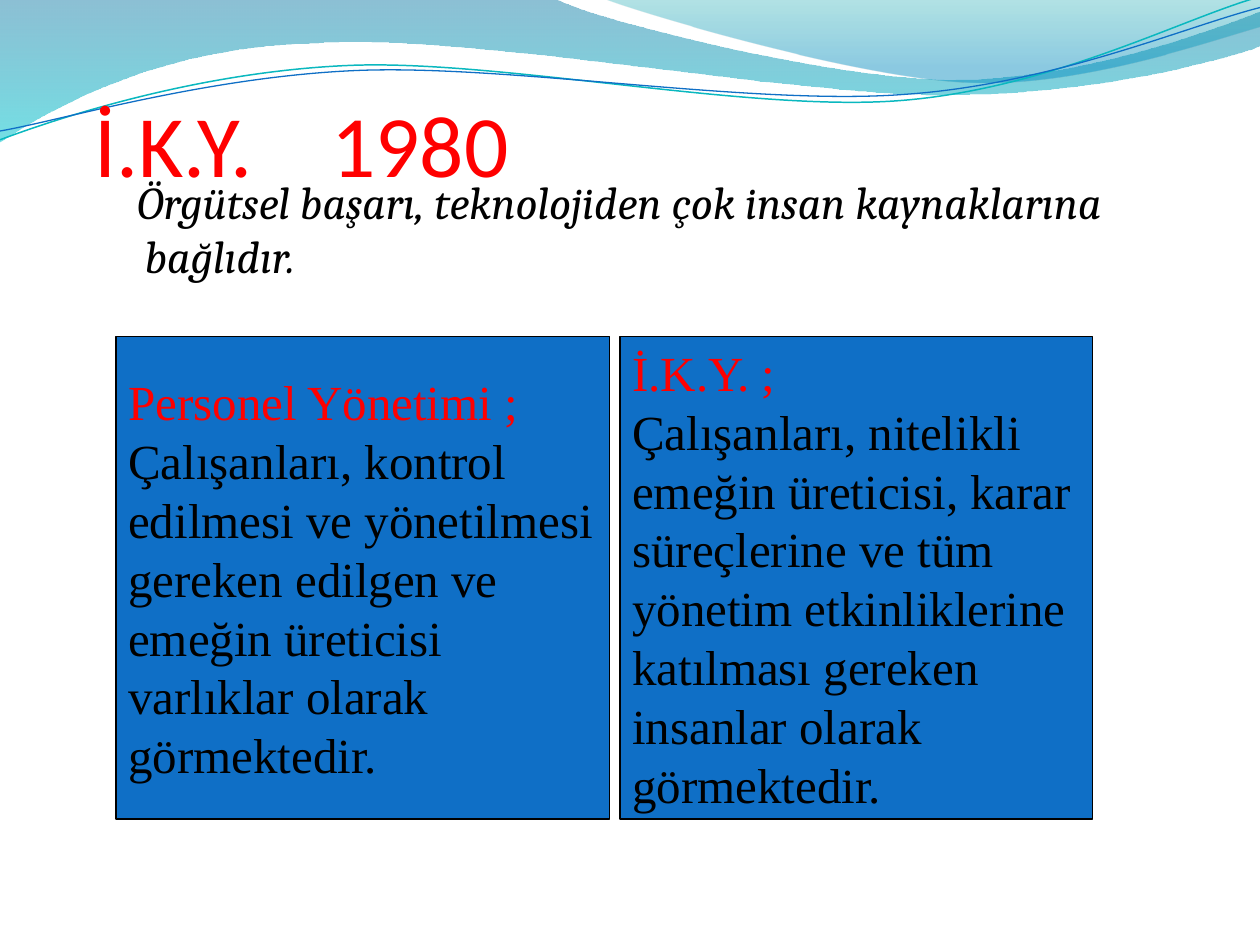
from lxml import etree
from pptx import Presentation
from pptx import util as u
from pptx.dml.color import RGBColor
from pptx.enum import shapes, text
from pptx.oxml.ns import qn

RED = RGBColor(0xFF, 0x00, 0x00)
BLACK = RGBColor(0x00, 0x00, 0x00)
BLUE = RGBColor(0x0F, 0x6F, 0xC6)
TEAL = RGBColor(0x0A, 0xB8, 0xBF)
DEEP_BLUE = RGBColor(0x00, 0x74, 0xA1)
CYAN = RGBColor(0x00, 0xC6, 0xCF)
SEA = RGBColor(0x00, 0xA1, 0xA9)
SKY = RGBColor(0x00, 0x8B, 0xBF)

WIDTH, HEIGHT = 10, 7.5
MARGIN = 0.75

TITLE = "İ.K.Y.\t1980"
SUBTITLE = "Örgütsel başarı, teknolojiden çok insan kaynaklarına bağlıdır."
# Left edge, width, heading, lines
PANELS = [
    (0.92, 3.92, "Personel Yönetimi ;",
     ["Çalışanları, kontrol", "edilmesi ve yönetilmesi", "gereken edilgen ve",
      "emeğin üreticisi", "varlıklar olarak", "görmektedir."]),
    (4.92, 3.75, "İ.K.Y. ;",
     ["Çalışanları, nitelikli", "emeğin üreticisi, karar", "süreçlerine ve tüm",
      "yönetim etkinliklerine", "katılması gereken", "insanlar olarak",
      "görmektedir."]),
]
PANEL_TOP, PANEL_HEIGHT = 2.67, 3.83

# Each outline: start, then points (2 numbers) or Bezier segments (6 numbers)
# Bands add gradient stops as (colour, opacity %, position)
BANDS = [
    ([(0, 0), (4.4, -0.01), (4.76, 0.17, 6.64, 0.63, 7.58, 0.63),
      (8.53, 0.63, 9.58, 0.26, 10, 0.09), (10.01, 0.36),
      (9.83, 0.44, 8.7, 0.76, 7.46, 0.75), (6.22, 0.75, 3.82, 0.28, 2.57, 0.34),
      (1.29, 0.36, 0.46, 0.83, -0.01, 1.13)],
     [(DEEP_BLUE, 45, 0), (CYAN, 55, 1)]),
    ([(4.79, -0.01), (5.09, 0.11, 6.82, 0.62, 7.69, 0.65),
      (8.56, 0.69, 9.61, 0.32, 10, 0.21), (10, 0)],
     [(SEA, 30, 0), (SKY, 45, 0.8)]),
]
WAVES = [
    ([(0, 1.11), (0.48, 0.93, 1.58, 0.57, 2.77, 0.52),
      (3.95, 0.47, 5.93, 0.89, 7.13, 0.8), (8.33, 0.71, 9.38, 0.15, 9.98, -0.02)],
     TEAL, 0.85),
    ([(0, 1.04), (0.47, 0.96, 1.64, 0.61, 2.83, 0.56),
      (4.03, 0.51, 5.97, 0.84, 7.17, 0.75), (8.36, 0.67, 9.41, 0.21, 10, 0.06)],
     BLUE, 0.75),
]
UNITS = 1000  # outline units per inch


def add_outline(page, outline, close):
    """Build straight segments, then bend those that have control points."""
    scaled = [[round(value * UNITS) for value in segment] for segment in outline]
    ends = [segment[-2:] for segment in scaled]
    left, top = (min(values) for values in zip(*ends))
    builder = page.shapes.build_freeform(*ends[0], scale=u.Inches(1) / UNITS)
    builder.add_line_segments(ends[1:], close=close)
    shape = builder.convert_to_shape()
    shape.shadow.inherit = False
    sides = list(shape._element.iter(qn("a:lnTo")))
    for side, segment in zip(sides, scaled[1:]):
        if len(segment) == 6:
            curve = etree.Element(qn("a:cubicBezTo"))
            for x, y in zip(segment[::2], segment[1::2]):
                etree.SubElement(curve, qn("a:pt"), x=str(x - left), y=str(y - top))
            side.getparent().replace(side, curve)
    return shape


def add_span(para, words, size, font, color, italic=False):
    span = para.add_run()
    span.text = words
    span.font.size = u.Pt(size)
    span.font.name = font
    span.font.color.rgb = color
    span.font.italic = italic


def add_text_box(page, top, height):
    box = page.shapes.add_textbox(u.Inches(MARGIN), u.Inches(top),
                                  u.Inches(WIDTH - 2 * MARGIN), u.Inches(height))
    box.text_frame.word_wrap = True
    return box.text_frame


deck = Presentation()
deck.slide_width, deck.slide_height = u.Inches(WIDTH), u.Inches(HEIGHT)
page = deck.slides.add_slide(deck.slide_layouts[6])

# Gradient bands along the top
for outline, stops in BANDS:
    band = add_outline(page, outline, True)
    band.line.fill.background()
    band.fill.gradient()
    band.fill.gradient_angle = 270
    for stop, (color, _, position) in zip(band.fill.gradient_stops, stops):
        stop.color.rgb = color
        stop.position = position
    colors = list(band._element.spPr.iter(qn("a:srgbClr")))
    for node, (_, opacity, _) in zip(colors, stops):
        etree.SubElement(node, qn("a:alpha"), val=str(opacity * 1000))

# Thin waves
for outline, color, weight in WAVES:
    wave = add_outline(page, outline, False)
    wave.fill.background()
    wave.line.color.rgb = color
    wave.line.width = u.Pt(weight)

# Title, with a tab stop before the year
frame = add_text_box(page, 0.3, 1.25)
frame.vertical_anchor = text.MSO_ANCHOR.BOTTOM
frame.margin_left = frame.margin_right = frame.margin_bottom = 0
para = frame.paragraphs[0]
tabs = etree.SubElement(para._p.get_or_add_pPr(), qn("a:tabLst"))
etree.SubElement(tabs, qn("a:tab"), pos=str(u.Inches(1.88)), algn="l")
add_span(para, TITLE, 50, "Calibri", RED)

# Subtitle with a hanging indent
para = add_text_box(page, 1.33, 5.33).paragraphs[0]
para.space_before = u.Pt(5)
properties = para._p.get_or_add_pPr()
properties.set("marL", str(u.Inches(0.3)))
properties.set("indent", str(u.Inches(-0.06)))
add_span(para, SUBTITLE, 26, "Cambria", BLACK, italic=True)

# Two compared panels
for left, width, heading, lines in PANELS:
    panel = page.shapes.add_shape(
        shapes.MSO_SHAPE.RECTANGLE, u.Inches(left), u.Inches(PANEL_TOP),
        u.Inches(width), u.Inches(PANEL_HEIGHT))
    panel.shadow.inherit = False
    panel.fill.solid()
    panel.fill.fore_color.rgb = BLUE
    panel.line.color.rgb = BLACK
    panel.line.width = u.Pt(0.75)
    frame = panel.text_frame
    frame.word_wrap = True
    frame.vertical_anchor = text.MSO_ANCHOR.MIDDLE
    for index, words in enumerate([heading] + lines):
        para = frame.add_paragraph() if index else frame.paragraphs[0]
        para.alignment = text.PP_ALIGN.LEFT
        add_span(para, words, 28, "Times New Roman", BLACK if index else RED)

deck.save("out.pptx")
